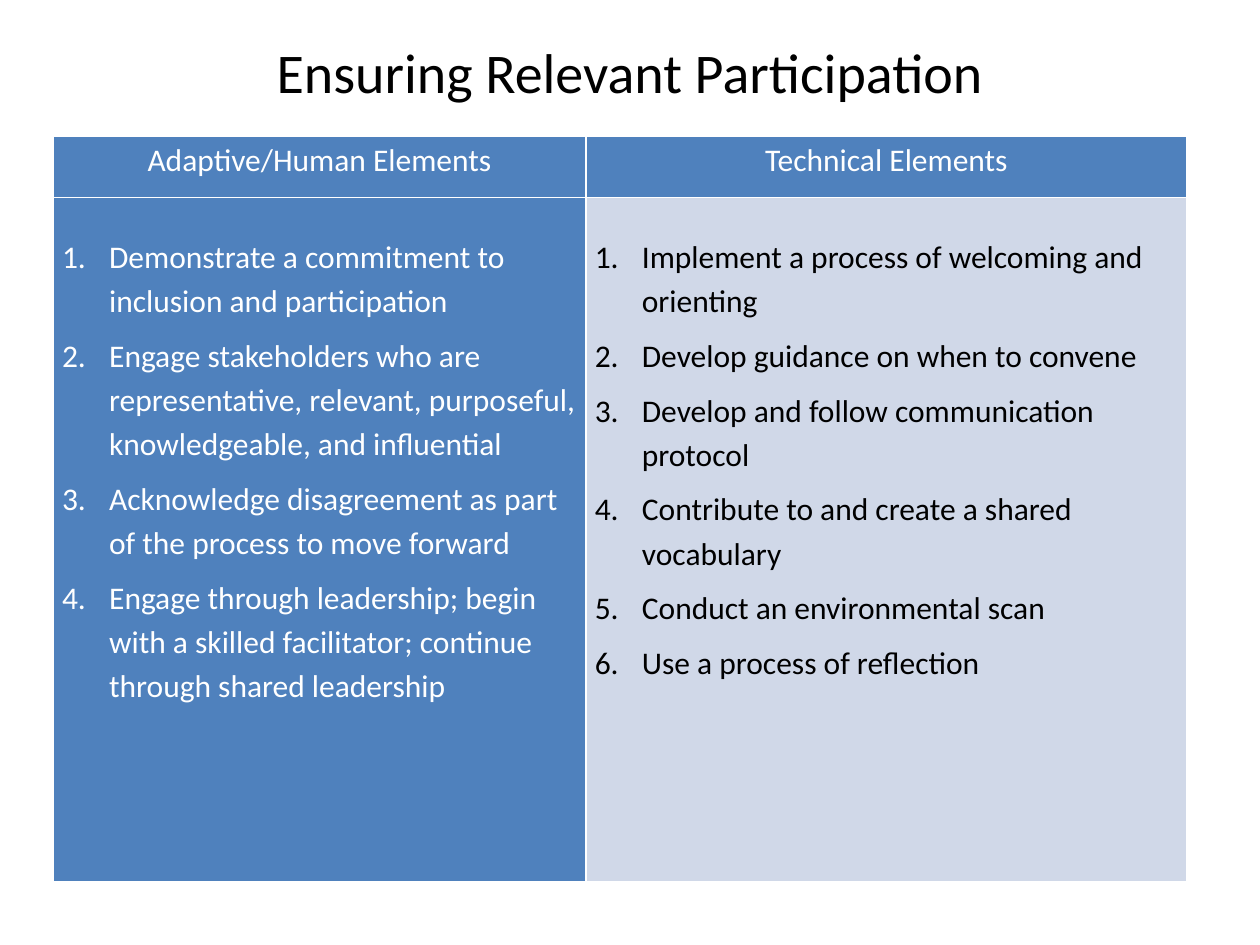
from dataclasses import dataclass

from lxml import etree
from pptx import Presentation
from pptx.dml.color import RGBColor
from pptx.enum.text import MSO_ANCHOR, PP_ALIGN
from pptx.oxml.ns import qn
from pptx.util import Cm, Pt

CENTER = PP_ALIGN.CENTER
LEFT = PP_ALIGN.LEFT
MIDDLE = MSO_ANCHOR.MIDDLE
BLANK_LAYOUT = 6


@dataclass(frozen=True)
class Theme:
    """Hold the font, type sizes and colours of the slide."""
    font: str = "Calibri"
    title_size: int = 32
    table_size: int = 18
    dark: str = "000000"
    light: str = "FFFFFF"
    accent: str = "4F81BD"
    pale: str = "D0D8E8"


THEME = Theme()
TITLE = "Ensuring Relevant Participation"
COLUMNS = [
    {
        "heading": "Adaptive/Human Elements",
        "width": Cm(10.74),
        "fill": THEME.accent,
        "color": THEME.light,
        "items": [
            "Demonstrate a commitment to inclusion and participation",
            "Engage stakeholders who are representative, relevant, purposeful, "
            "knowledgeable, and influential",
            "Acknowledge disagreement as part of the process to move forward",
            "Engage through leadership; begin with a skilled facilitator; "
            "continue through shared leadership",
        ],
    },
    {
        "heading": "Technical Elements",
        "width": Cm(12.12),
        "fill": THEME.pale,
        "color": THEME.dark,
        "items": [
            "Implement a process of welcoming and orienting",
            "Develop guidance on when to convene",
            "Develop and follow communication protocol",
            "Contribute to and create a shared vocabulary",
            "Conduct an environmental scan",
            "Use a process of reflection",
        ],
    },
]
ROW_HEIGHTS = [Cm(1.24), Cm(13.79)]
HEADING_FORMAT = {"alignment": CENTER, "line_spacing": 1.15}
ITEM_FORMAT = {"alignment": LEFT, "line_spacing": 1.15, "space_after": Pt(6)}
CELL_MARGINS = {"margin_left": Cm(0.18), "margin_right": Cm(0.18), "margin_bottom": 0}


def apply_format(target, values):
    """Set each named attribute on the target."""
    for name, value in values.items():
        setattr(target, name, value)


def write_paragraph(paragraph, text, size, color, values):
    """Fill a paragraph with one formatted run."""
    apply_format(paragraph, values)
    run = paragraph.add_run()
    run.text = text
    apply_format(run.font, {"name": THEME.font, "size": Pt(size), "bold": False})
    run.font.color.rgb = RGBColor.from_string(color)


def number_paragraph(paragraph):
    """Give a paragraph a hanging automatic number."""
    properties = paragraph._p.get_or_add_pPr()
    indent = Cm(0.95)
    properties.set("marL", str(indent))
    properties.set("indent", str(-indent))
    etree.SubElement(properties, qn("a:buFont"), typeface="+mj-lt")
    etree.SubElement(properties, qn("a:buAutoNum"), type="arabicPeriod")


def style_cell(cell, fill, margin_top):
    """Set the margins, borders and fill of a cell."""
    apply_format(cell, {**CELL_MARGINS, "margin_top": margin_top})
    properties = cell._tc.get_or_add_tcPr()
    for side in ("lnL", "lnR", "lnT", "lnB"):
        line = etree.SubElement(properties, qn(f"a:{side}"), w=str(Pt(1)))
        solid = etree.SubElement(line, qn("a:solidFill"))
        etree.SubElement(solid, qn("a:srgbClr"), val=THEME.light)
    cell.fill.solid()
    cell.fill.fore_color.rgb = RGBColor.from_string(fill)


def fill_heading(cell, text):
    """Write a column heading."""
    style_cell(cell, THEME.accent, 0)
    write_paragraph(cell.text_frame.paragraphs[0], text, THEME.table_size,
                    THEME.light, HEADING_FORMAT)


def fill_list(cell, items, fill, color):
    """Write a numbered list into a cell."""
    style_cell(cell, fill, Cm(0.71))
    frame = cell.text_frame
    for index, item in enumerate(items):
        paragraph = frame.add_paragraph() if index else frame.paragraphs[0]
        write_paragraph(paragraph, item, THEME.table_size, color, ITEM_FORMAT)
        number_paragraph(paragraph)


def add_title(slide):
    """Add the centred slide title."""
    shape = slide.shapes.add_textbox(Cm(1.27), Cm(0.76), Cm(22.86), Cm(1.35))
    frame = shape.text_frame
    apply_format(frame, {"word_wrap": True, "vertical_anchor": MIDDLE})
    write_paragraph(frame.paragraphs[0], TITLE, THEME.title_size, THEME.dark,
                    {"alignment": CENTER})


def add_elements_table(slide):
    """Add the two-column table of elements."""
    width = sum(column["width"] for column in COLUMNS)
    table = slide.shapes.add_table(len(ROW_HEIGHTS), len(COLUMNS), Cm(1.07), Cm(2.74),
                                   width, sum(ROW_HEIGHTS)).table
    for row, height in zip(table.rows, ROW_HEIGHTS):
        row.height = height
    for index, column in enumerate(COLUMNS):
        table.columns[index].width = column["width"]
        fill_heading(table.cell(0, index), column["heading"])
        fill_list(table.cell(1, index), column["items"], column["fill"], column["color"])


def main():
    """Build and save the presentation."""
    presentation = Presentation()
    apply_format(presentation, {"slide_width": Cm(25.4), "slide_height": Cm(19.05)})
    slide = presentation.slides.add_slide(presentation.slide_layouts[BLANK_LAYOUT])
    add_title(slide)
    add_elements_table(slide)
    presentation.save("out.pptx")


if __name__ == "__main__":
    main()
